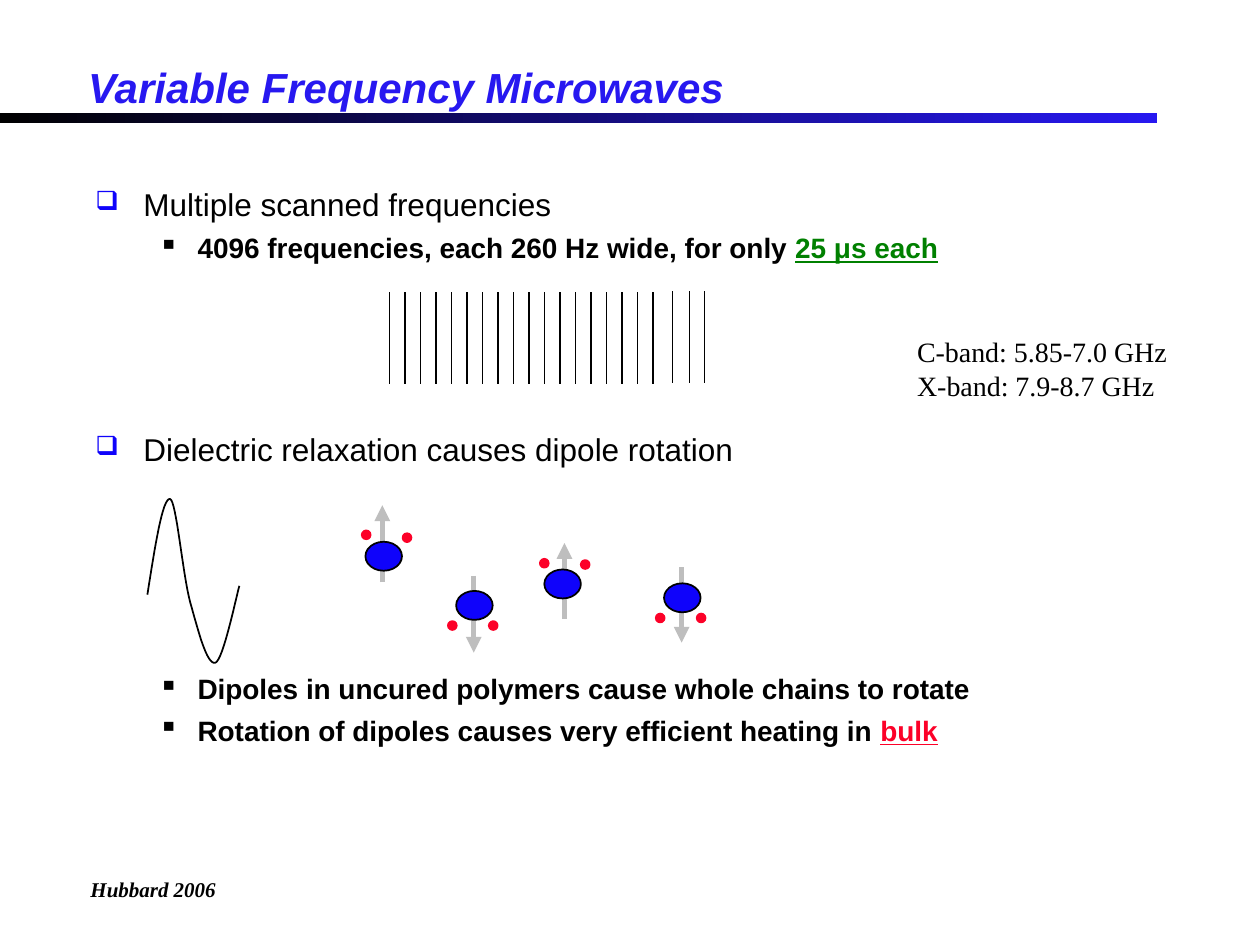
from dataclasses import dataclass
from math import cos, radians, sin

from lxml import etree
from pptx import Presentation
from pptx.dml.color import RGBColor
from pptx.enum.shapes import MSO_CONNECTOR, MSO_SHAPE
from pptx.enum.text import MSO_ANCHOR, PP_ALIGN
from pptx.oxml.ns import qn
from pptx.util import Inches, Pt

STRAIGHT = MSO_CONNECTOR.STRAIGHT
RECTANGLE, OVAL = MSO_SHAPE.RECTANGLE, MSO_SHAPE.OVAL
MIDDLE, TOP = MSO_ANCHOR.MIDDLE, MSO_ANCHOR.TOP
LEFT = PP_ALIGN.LEFT


@dataclass(frozen=True)
class Theme:
    black: str = "000000"
    accent: str = "2718F0"
    blue: str = "0F03FB"
    red: str = "FC0128"
    green: str = "008000"
    grey: str = "BEBEBE"
    sans: str = "Arial"
    serif: str = "Times New Roman"
    title: int = 24
    topic: int = 18
    detail: int = 16
    footer: int = 12


THEME = Theme()
COLUMNS, ROWS = 100, 75
WIDTH, HEIGHT = Inches(10), Inches(7.5)

TITLE = "Variable Frequency Microwaves"
FOOTER = "Hubbard 2006"
BANDS = ["C-band: 5.85-7.0 GHz", "X-band: 7.9-8.7 GHz"]

TOPIC = dict(size=THEME.topic, bullet="❑", bullet_color=THEME.blue,
             bullet_size=84, margin=0.38, hang=0.38)
DETAIL = dict(size=THEME.detail, bold=True, bullet="▪", bullet_color=THEME.black,
              bullet_size=100, margin=0.81, hang=0.31)
OUTLINE = [
    (TOPIC, 0, "Multiple scanned frequencies", None),
    (DETAIL, 4.5, "4096 frequencies, each 260 Hz wide, for only ",
     ("25 μs each", THEME.green)),
    (TOPIC, 94.6, "Dielectric relaxation causes dipole rotation", None),
    (DETAIL, 116.6, "Dipoles in uncured polymers cause whole chains to rotate", None),
    (DETAIL, 4.5, "Rotation of dipoles causes very efficient heating in ",
     ("bulk", THEME.red)),
]

SCAN_START, SCAN_PITCH, SCAN_COUNT = 30.92, 1.23, 18
SCAN_TOP, SCAN_HEIGHT = 23.2, 7.3
EXTRA_SCANS, EXTRA_TOP = [53.4, 54.7, 55.9], 23.1

DIPOLES = [
    dict(core=(37.65, 48.05), turn=0, axis=37.6, tail=45.7, tip=51.8),
    dict(core=(44.65, 46.35), turn=181.8, axis=44.8, tail=49.1, tip=43.1),
    dict(core=(54.15, 47.45), turn=0, axis=54.1, tail=45, tip=51),
    dict(core=(30.45, 44.15), turn=184, axis=30.35, tail=46.2, tip=40.1),
]
CHARGES = [(-1.75, 1.6), (1.5, 1.6)]
CORE_SIZE, CHARGE_SIZE = (2.9, 2.3), (0.7, 0.7)

WAVE_START = (11.7, 47.2)
WAVE_CURVES = [
    [(12.3, 43.4), (12.9, 39.5), (13.5, 39.6)],
    [(14, 39.7), (14.5, 45.6), (15.1, 47.8)],
    [(15.7, 49.9), (16.4, 52.8), (17.1, 52.6)],
    [(17.7, 52.4), (18.7, 47.6), (19, 46.5)],
]
WAVE_STEPS = 16


def place(x, y):
    return round(x * WIDTH / COLUMNS), round(y * HEIGHT / ROWS)


def rgb(color):
    return RGBColor.from_string(color)


def write(paragraph, text, *, size, font=THEME.sans, color=THEME.black, bold=False,
          italic=False, underline=False, before=0, bullet=None, bullet_color=None,
          bullet_size=100, margin=0, hang=0):
    paragraph.alignment = LEFT
    paragraph.space_before = Pt(before)
    properties = paragraph._p.get_or_add_pPr()
    if bullet and not paragraph.runs:
        properties.set("marL", str(Inches(margin)))
        properties.set("indent", str(-Inches(hang)))
        tint = etree.SubElement(properties, qn("a:buClr"))
        etree.SubElement(tint, qn("a:srgbClr"), val=bullet_color)
        etree.SubElement(properties, qn("a:buSzPct"), val=str(bullet_size * 1000))
        etree.SubElement(properties, qn("a:buChar"), char=bullet)
    run = paragraph.add_run()
    run.text = text
    style = run.font
    style.size, style.name = Pt(size), font
    style.bold, style.italic, style.underline = bold, italic, underline
    style.color.rgb = rgb(color)


def text_frame(slide, x, y, width, height, wrap):
    frame = slide.shapes.add_textbox(*place(x, y), *place(width, height)).text_frame
    frame.word_wrap, frame.vertical_anchor = wrap, TOP
    return frame


def next_paragraph(frame, index):
    return frame.add_paragraph() if index else frame.paragraphs[0]


def add_line(slide, start, end, color, weight, arrow=False):
    line = slide.shapes.add_connector(STRAIGHT, *place(*start), *place(*end))
    line.line.color.rgb, line.line.width = rgb(color), Pt(weight)
    if arrow:
        etree.SubElement(line.line._get_or_add_ln(), qn("a:tailEnd"), type="triangle")
    etree.SubElement(line._element.spPr, qn("a:effectLst"))


def add_ball(slide, center, size, fill, outline):
    corner = [middle - length / 2 for middle, length in zip(center, size)]
    ball = slide.shapes.add_shape(OVAL, *place(*corner), *place(*size))
    ball.shadow.inherit = False
    ball.fill.solid()
    ball.fill.fore_color.rgb = rgb(fill)
    ball.line.color.rgb, ball.line.width = rgb(outline), Pt(1)


def add_dipole(slide, core, turn, axis, tail, tip):
    add_line(slide, (axis, tail), (axis, tip), THEME.grey, 3, arrow=True)
    add_ball(slide, core, CORE_SIZE, THEME.blue, THEME.black)
    c, s = cos(radians(turn)), sin(radians(turn))
    for dx, dy in CHARGES:
        center = core[0] + dx * c - dy * s, core[1] + dx * s + dy * c
        add_ball(slide, center, CHARGE_SIZE, THEME.red, THEME.red)


def wave_points():
    start = WAVE_START
    for first, second, end in WAVE_CURVES:
        for step in range(1, WAVE_STEPS + 1):
            t = step / WAVE_STEPS
            u = 1 - t
            yield place(*(u**3 * a + 3 * u * u * t * b + 3 * u * t * t * c + t**3 * d
                          for a, b, c, d in zip(start, first, second, end)))
        start = end


def add_wave(slide):
    builder = slide.shapes.build_freeform(*place(*WAVE_START))
    builder.add_line_segments(list(wave_points()), close=False)
    wave = builder.convert_to_shape()
    wave.shadow.inherit = False
    wave.fill.background()
    wave.line.color.rgb, wave.line.width = rgb(THEME.black), Pt(1)


def add_rule(slide):
    rule = slide.shapes.add_shape(RECTANGLE, *place(0, 9), *place(91.8, 0.8))
    rule.shadow.inherit = False
    rule.line.fill.background()
    rule.fill.gradient()
    rule.fill.gradient_angle = 0
    for stop, color in zip(rule.fill.gradient_stops, (THEME.black, THEME.accent)):
        stop.color.rgb = rgb(color)


def main():
    deck = Presentation()
    deck.slide_width, deck.slide_height = WIDTH, HEIGHT
    slide = deck.slides.add_slide(deck.slide_layouts[5])

    add_rule(slide)
    heading = slide.shapes.title
    heading.left, heading.top = place(6, 3.5)
    heading.width, heading.height = place(88.9, 6.7)
    heading.text_frame.vertical_anchor = MIDDLE
    write(heading.text_frame.paragraphs[0], TITLE, size=THEME.title,
          color=THEME.accent, bold=True, italic=True)

    footer = text_frame(slide, 6.2, 69.1, 12, 3, wrap=False)
    write(footer.paragraphs[0], FOOTER, size=THEME.footer, font=THEME.serif,
          bold=True, italic=True)

    body = text_frame(slide, 6.6, 14.2, 93.4, 49.2, wrap=True)
    for index, (level, before, text, emphasis) in enumerate(OUTLINE):
        paragraph = next_paragraph(body, index)
        write(paragraph, text, before=before, **level)
        if emphasis:
            word, color = emphasis
            write(paragraph, word, before=before, color=color, underline=True, **level)

    bands = text_frame(slide, 71.8, 26.1, 21.9, 6.4, wrap=False)
    for index, band in enumerate(BANDS):
        write(next_paragraph(bands, index), band, size=THEME.detail, font=THEME.serif)

    scans = [(SCAN_START + i * SCAN_PITCH, SCAN_TOP) for i in range(SCAN_COUNT)]
    scans += [(x, EXTRA_TOP) for x in EXTRA_SCANS]
    for x, top in scans:
        add_line(slide, (x, top), (x, top + SCAN_HEIGHT), THEME.black, 0.75)

    for dipole in DIPOLES:
        add_dipole(slide, **dipole)
    add_wave(slide)
    deck.save("out.pptx")


if __name__ == "__main__":
    main()
